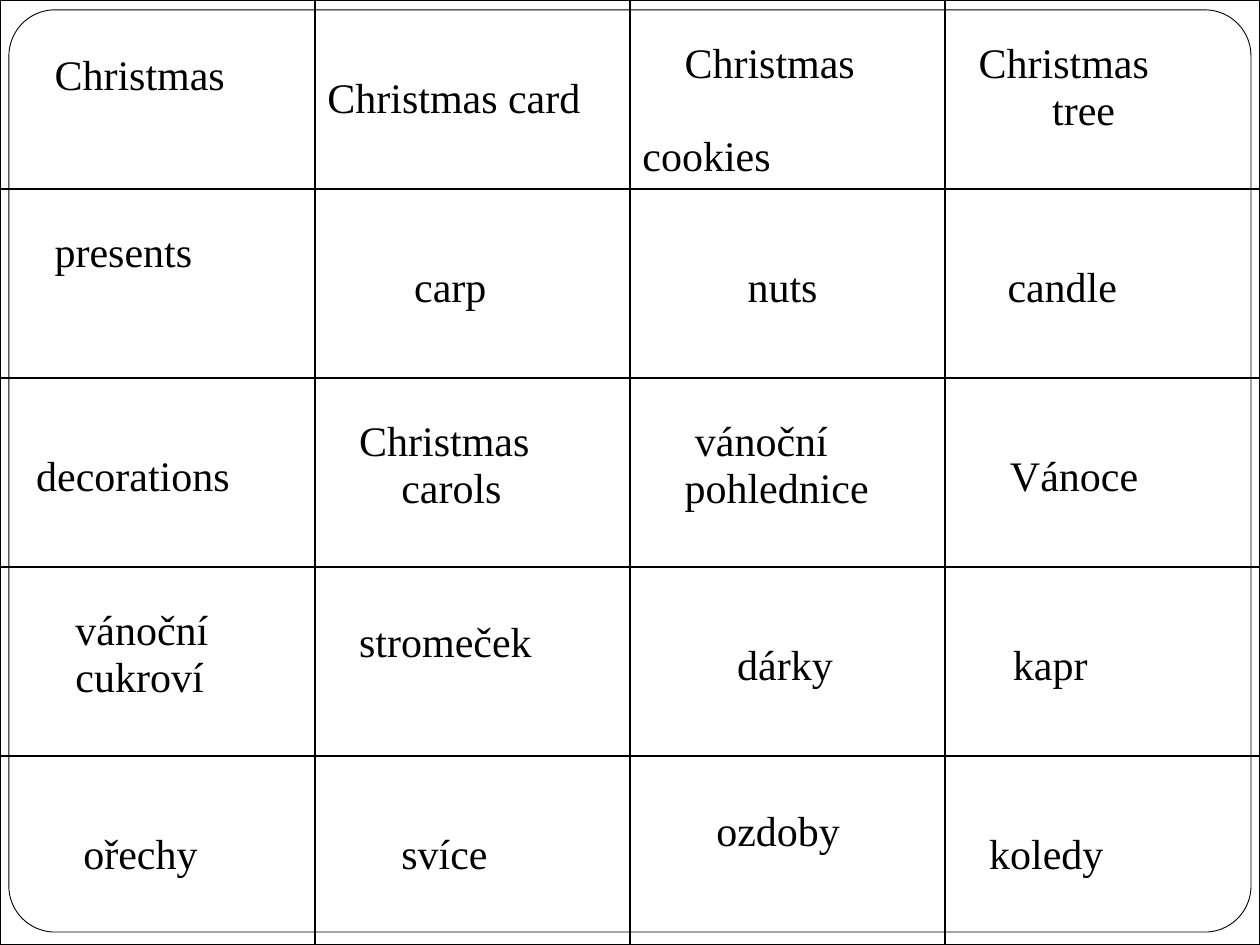
from lxml import etree
from pptx import Presentation
from pptx.dml.color import RGBColor
from pptx.enum.shapes import MSO_SHAPE
from pptx.oxml.ns import qn
from pptx.util import Cm, Pt

ROUNDED = MSO_SHAPE.ROUNDED_RECTANGLE
COLUMN_WIDTH, ROW_HEIGHT = 6.35, 3.81
HIGH, MIDDLE, LOW = 0.83, 1.07, 1.53
FONT = {"name": "Times New Roman", "size": Pt(24), "bold": False}
MARGINS = {"margin_left": Cm(0), "margin_right": Cm(0), "margin_bottom": Cm(0.13)}

CARDS = [
    [
        (MIDDLE, [(1.1, "Christmas")]),
        (LOW, [(0.25, "Christmas card")]),
        (HIGH, [(1.1, "Christmas"), (0.25, "cookies")]),
        (HIGH, [(0.68, "Christmas"), (2.16, "tree")]),
    ],
    [
        (HIGH, [(1.1, "presents")]),
        (LOW, [(2, "carp")]),
        (LOW, [(2.37, "nuts")]),
        (LOW, [(1.26, "candle")]),
    ],
    [
        (LOW, [(0.73, "decorations")]),
        (HIGH, [(0.89, "Christmas"), (1.74, "carols")]),
        (HIGH, [(1.31, "vánoční"), (1.1, "pohlednice")]),
        (LOW, [(1.31, "Vánoce")]),
    ],
    [
        (HIGH, [(1.52, "vánoční"), (1.52, "cukroví")]),
        (MIDDLE, [(0.89, "stromeček")]),
        (LOW, [(2.16, "dárky")]),
        (LOW, [(1.37, "kapr")]),
    ],
    [
        (LOW, [(1.68, "ořechy")]),
        (LOW, [(1.74, "svíce")]),
        (MIDDLE, [(1.74, "ozdoby")]),
        (LOW, [(0.89, "koledy")]),
    ],
]


def color(value):
    return RGBColor.from_string(value)


def add_borders(cell, value, width):
    properties = cell._tc.get_or_add_tcPr()
    for side in ("lnL", "lnR", "lnT", "lnB"):
        line = etree.SubElement(properties, qn(f"a:{side}"), w=str(width))
        fill = etree.SubElement(line, qn("a:solidFill"))
        etree.SubElement(fill, qn("a:srgbClr"), val=value)


deck = Presentation()
deck.slide_width, deck.slide_height = Cm(25.4), Cm(19.05)
page = deck.slides.add_slide(deck.slide_layouts[6])

frame = page.shapes.add_shape(ROUNDED, Cm(0.18), Cm(0.2), Cm(25.04), Cm(18.59))
frame.adjustments[0] = 0.05
frame.shadow.inherit = False
frame.fill.solid()
frame.fill.fore_color.rgb = color("FFFFFF")
frame.line.color.rgb = color("000000")
frame.line.width = Pt(0.5)

table = page.shapes.add_table(
    len(CARDS), len(CARDS[0]), Cm(0), Cm(0), deck.slide_width, deck.slide_height
).table
table.first_row = False
table.horz_banding = False
for column in table.columns:
    column.width = Cm(COLUMN_WIDTH)

for row_index, cards in enumerate(CARDS):
    table.rows[row_index].height = Cm(ROW_HEIGHT)
    for column_index, (top, lines) in enumerate(cards):
        cell = table.cell(row_index, column_index)
        add_borders(cell, "000000", Pt(1))
        cell.fill.background()
        cell.margin_top = Cm(top)
        for name, value in MARGINS.items():
            setattr(cell, name, value)
        cell.text_frame.text = "\n".join(text for indent, text in lines)
        for para, (indent, text) in zip(cell.text_frame.paragraphs, lines):
            para._p.get_or_add_pPr().set("marL", str(Cm(indent)))
            span = para.runs[0]
            for name, value in FONT.items():
                setattr(span.font, name, value)
            span.font.color.rgb = color("000000")

table.cell(0, 2).text_frame.paragraphs[1].space_before = Pt(26.5)

deck.save("out.pptx")
